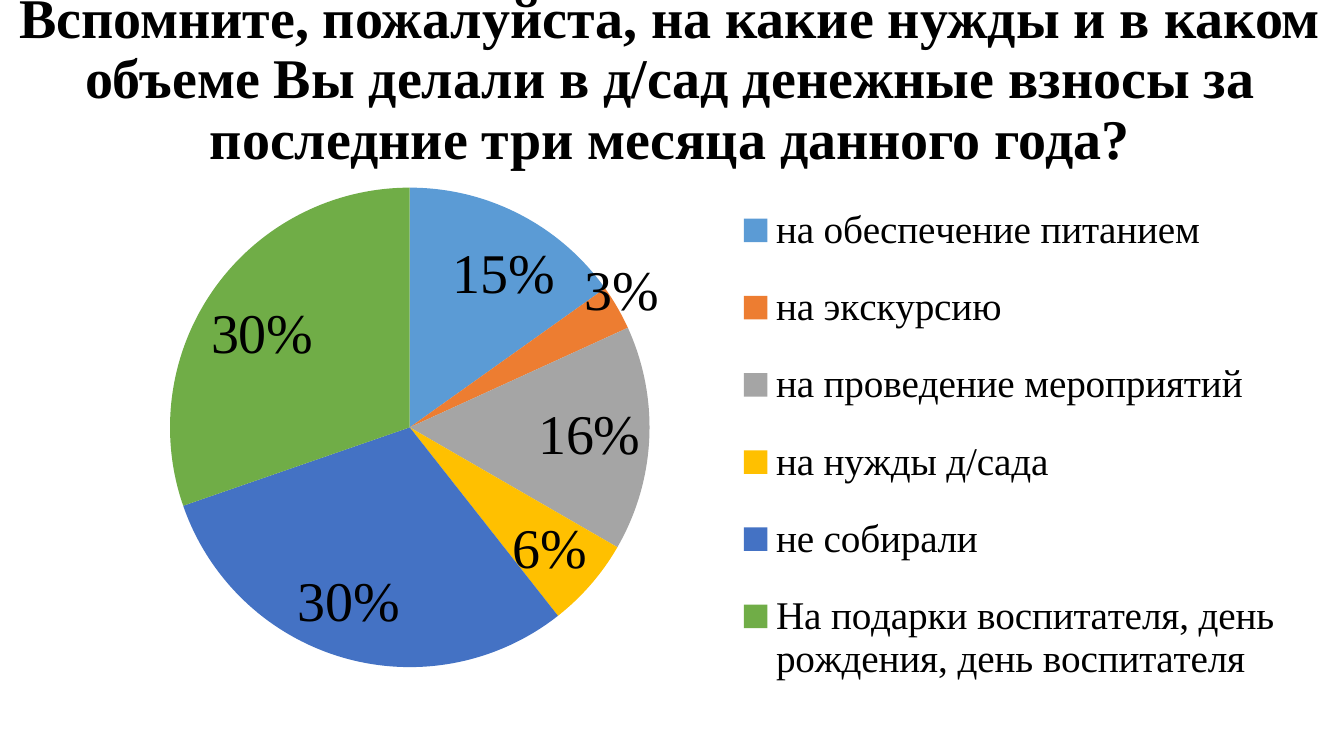
from dataclasses import dataclass

from lxml import etree
from pptx import Presentation
from pptx.chart.data import CategoryChartData
from pptx.dml.color import RGBColor
from pptx.enum.chart import XL_CHART_TYPE, XL_LABEL_POSITION, XL_LEGEND_POSITION
from pptx.enum.text import MSO_ANCHOR, PP_ALIGN
from pptx.oxml.ns import qn
from pptx.util import Pt

PIE = XL_CHART_TYPE.PIE
BEST = XL_LABEL_POSITION.BEST_FIT
INSIDE = XL_LABEL_POSITION.INSIDE_END
RIGHT = XL_LEGEND_POSITION.RIGHT
MIDDLE = MSO_ANCHOR.MIDDLE
CENTER = PP_ALIGN.CENTER


@dataclass(frozen=True)
class Theme:
    face: str = "Times New Roman"
    ink: str = "000000"
    title: int = 40
    label: int = 40
    chart: int = 32
    legend: int = 28


THEME = Theme()

TITLE = ("Вспомните, пожалуйста, на какие нужды и в каком объеме Вы делали "
         "в д/сад денежные взносы за последние три месяца данного года?")

# Purpose, share, colour
NEEDS = [
    ("на обеспечение питанием", 15, "5B9BD5"),
    ("на экскурсию", 3, "ED7D31"),
    ("на проведение мероприятий", 15, "A5A5A5"),
    ("на нужды д/сада", 6, "FFC000"),
    ("не собирали", 30, "4472C4"),
    ("На подарки воспитателя, день рождения, день воспитателя", 30, "70AD47"),
]
# Labels with their own wording, by slice
WORDS = {2: "16%", 4: "30%"}
# Percent labels with their own place and shift, by slice
PLACES = {1: (BEST, {"x": -0.03, "y": 0.03}), 3: (INSIDE, {})}


def style(font, size, bold=False):
    font.name = THEME.face
    font.size = Pt(size)
    font.bold = bold
    font.color.rgb = RGBColor.from_string(THEME.ink)


def add_title(slide, text, left, top, width, height):
    box = slide.shapes.add_textbox(Pt(left), Pt(top), Pt(width), Pt(height))
    frame = box.text_frame
    frame.word_wrap = True
    frame.vertical_anchor = MIDDLE
    para = frame.paragraphs[0]
    para.text = text
    para.alignment = CENTER
    para.line_spacing = 0.9
    style(para.font, THEME.title, bold=True)


def set_layout(node, index, **parts):
    """Place a part of the chart, in fractions of the chart."""
    for old in node.findall(qn("c:layout")):
        node.remove(old)
    layout = etree.Element(qn("c:layout"))
    node.insert(index, layout)
    manual = etree.SubElement(layout, qn("c:manualLayout"))
    for tag, value in parts.items():
        etree.SubElement(manual, qn("c:" + tag)).set("val", str(value))


def add_labels(series):
    labels = series.data_labels
    labels.show_value = False
    labels.show_percentage = True
    labels.number_format = "0%"
    labels.number_format_is_linked = False
    labels.position = BEST
    style(labels.font, THEME.label)

    for i, word in WORDS.items():
        label = series.points[i].data_label
        run = label.text_frame.paragraphs[0].add_run()
        run.text = word
        style(run.font, THEME.label)
        label.position = BEST

    for i, (place, shift) in PLACES.items():
        label = series.points[i].data_label
        style(label.font, THEME.label)
        label.position = place
        for node in labels._element.findall(qn("c:dLbl")):
            if node.find(qn("c:idx")).get("val") == str(i):
                node.find(qn("c:showVal")).set("val", "0")
                node.find(qn("c:showPercent")).set("val", "1")
                if shift:
                    set_layout(node, 1, **shift)


def add_pie(slide, needs, left, top, width, height):
    data = CategoryChartData()
    data.categories = [name for name, _, _ in needs]
    data.add_series("Series 1", [share for _, share, _ in needs])
    chart = slide.shapes.add_chart(
        PIE, Pt(left), Pt(top), Pt(width), Pt(height), data).chart
    chart.has_title = False
    style(chart.font, THEME.chart)
    area = chart.element.find(".//" + qn("c:plotArea"))
    set_layout(area, 0, layoutTarget="inner", xMode="edge", yMode="edge",
               x=0.09, y=0.06, w=0.38, h=0.82)

    # Legend
    chart.has_legend = True
    chart.legend.position = RIGHT
    chart.legend.include_in_layout = False
    style(chart.legend.font, THEME.legend)
    set_layout(chart.element.find(".//" + qn("c:legend")), 1,
               xMode="edge", yMode="edge", x=0.53, y=0.04, w=0.45, h=0.92)

    # Slices
    plot = chart.plots[0]
    plot.vary_by_categories = True
    series = plot.series[0]
    for i, (_, _, color) in enumerate(needs):
        fill = series.points[i].format.fill
        fill.solid()
        fill.fore_color.rgb = RGBColor.from_string(color)

    add_labels(series)


def main():
    deck = Presentation()
    deck.slide_width, deck.slide_height = Pt(960), Pt(540)
    slide = deck.slides.add_slide(deck.slide_layouts[6])
    add_title(slide, TITLE, -5.76, 5.4, 968.4, 104.4)
    add_pie(slide, NEEDS, 40.3, 108, 901.4, 419.8)
    deck.save("out.pptx")


if __name__ == "__main__":
    main()
